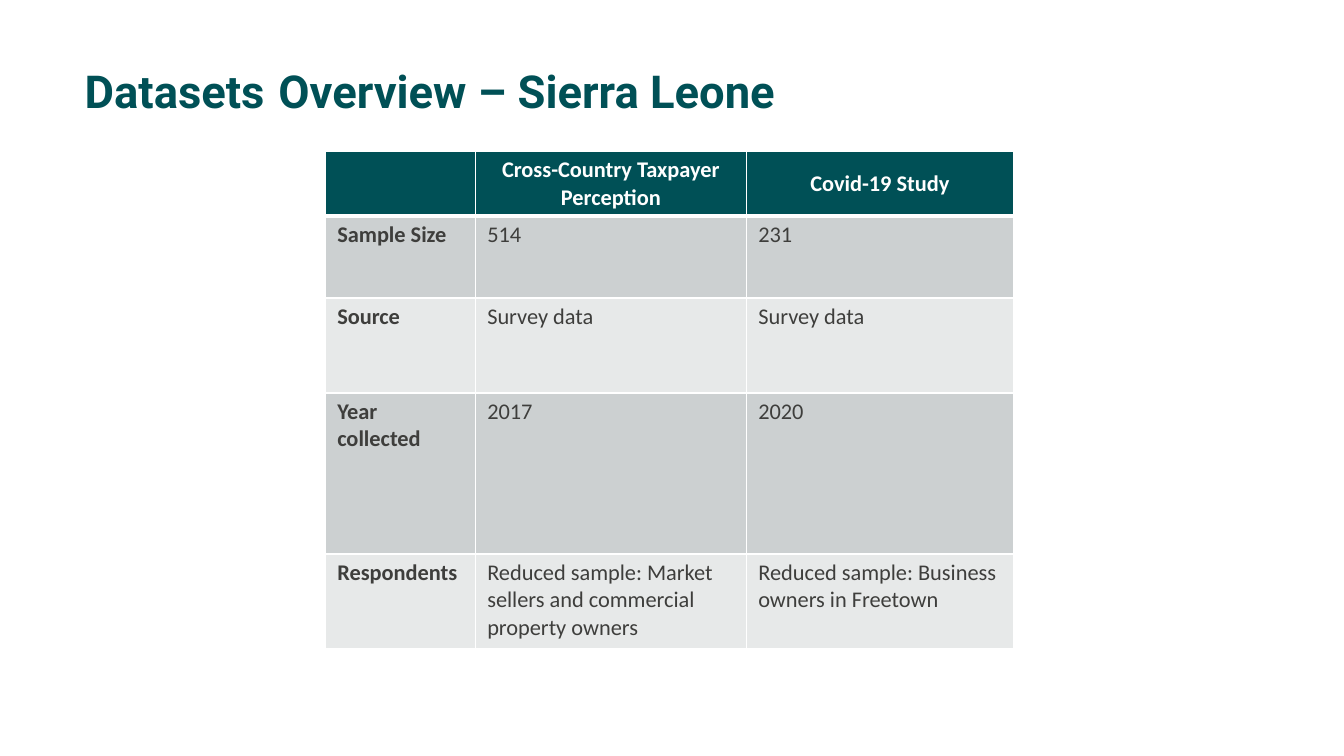
from lxml.etree import SubElement
from pptx import Presentation
from pptx.dml.color import RGBColor
from pptx.enum.text import MSO_ANCHOR as Anchor, MSO_AUTO_SIZE as AutoSize, PP_ALIGN as Align
from pptx.oxml.ns import qn
from pptx.util import Cm, Pt

TEAL = RGBColor(0x00, 0x50, 0x56)
CHARCOAL = RGBColor(0x3E, 0x3E, 0x3C)
WHITE = RGBColor(0xFF, 0xFF, 0xFF)
DARK_BAND = RGBColor(0xCC, 0xD0, 0xD1)
LIGHT_BAND = RGBColor(0xE7, 0xE9, 0xE9)

TITLE_WORDS = {"name": "Roboto", "size": Pt(32.4), "bold": True}
TITLE_SPACE = {"name": "Roboto", "size": Pt(39.6), "bold": False}
TITLE_RUNS = [
    ("Datasets", TITLE_WORDS, TEAL),
    (" ", TITLE_SPACE, CHARCOAL),
    ("Overview – Sierra Leone", TITLE_WORDS, TEAL),
]

DATASETS = [
    ("", "Cross-Country Taxpayer Perception", "Covid-19 Study"),
    ("Sample Size", "514", "231"),
    ("Source", "Survey data", "Survey data"),
    ("Year collected", "2017", "2020"),
    ("Respondents", "Reduced sample: Market sellers and commercial property owners",
     "Reduced sample: Business owners in Freetown"),
]
COLUMN_WIDTHS = [3.78, 6.83, 6.73]
ROW_HEIGHTS = [1.55, 2.06, 2.39, 4.06, 2.39]
CELL_MARGINS = {"margin_left": Cm(0.3), "margin_right": Cm(0.3),
                "margin_top": Cm(0.13), "margin_bottom": Cm(0.13)}


def apply_format(target, values):
    for name, value in values.items():
        setattr(target, name, value)


def add_run(paragraph, text, font_values, color):
    run = paragraph.add_run()
    run.text = text
    apply_format(run.font, font_values)
    run.font.color.rgb = color


def add_title(slide):
    title = slide.shapes.title
    apply_format(title, {"left": Cm(1.88), "top": Cm(1.35),
                         "width": Cm(25.45), "height": Cm(1.88)})
    apply_format(title.text_frame, {"vertical_anchor": Anchor.MIDDLE, "word_wrap": True,
                                    "auto_size": AutoSize.NONE})
    paragraph = title.text_frame.paragraphs[0]
    apply_format(paragraph, {"alignment": Align.LEFT, "line_spacing": 0.9})
    for text, font_values, color in TITLE_RUNS:
        add_run(paragraph, text, font_values, color)


def add_borders(cell, widths):
    properties = cell._tc.get_or_add_tcPr()
    for side, width in widths.items():
        line = SubElement(properties, qn(f"a:ln{side}"), w=str(Pt(width)))
        fill = SubElement(line, qn("a:solidFill"))
        SubElement(fill, qn("a:srgbClr"), val=str(WHITE))


def format_cell(cell, text, row, column):
    is_header = row == 0
    # Borders come before the fill in the cell properties
    add_borders(cell, {"L": 1, "R": 1, "T": 3 if row == 1 else 1, "B": 3 if is_header else 1})
    cell.fill.solid()
    band = DARK_BAND if row % 2 else LIGHT_BAND
    cell.fill.fore_color.rgb = TEAL if is_header else band
    apply_format(cell, CELL_MARGINS)
    cell.vertical_anchor = Anchor.MIDDLE if is_header else Anchor.TOP
    if text:
        paragraph = cell.text_frame.paragraphs[0]
        paragraph.alignment = Align.CENTER if is_header else Align.LEFT
        font_values = {"name": "Calibri", "size": Pt(16), "bold": is_header or column == 0}
        add_run(paragraph, text, font_values, WHITE if is_header else CHARCOAL)


def add_dataset_table(slide):
    table = slide.shapes.add_table(
        len(ROW_HEIGHTS), len(COLUMN_WIDTHS), Cm(8.2), Cm(3.81),
        Cm(sum(COLUMN_WIDTHS)), Cm(sum(ROW_HEIGHTS))).table
    table.first_col = True
    for column, width in zip(table.columns, COLUMN_WIDTHS):
        column.width = Cm(width)
    for row, height in zip(table.rows, ROW_HEIGHTS):
        row.height = Cm(height)
    for row, texts in enumerate(DATASETS):
        for column, text in enumerate(texts):
            format_cell(table.cell(row, column), text, row, column)


def main():
    presentation = Presentation()
    apply_format(presentation, {"slide_width": Cm(33.87), "slide_height": Cm(19.05)})
    # Title Only layout
    slide = presentation.slides.add_slide(presentation.slide_layouts[5])
    add_title(slide)
    add_dataset_table(slide)
    presentation.save("out.pptx")


if __name__ == "__main__":
    main()
